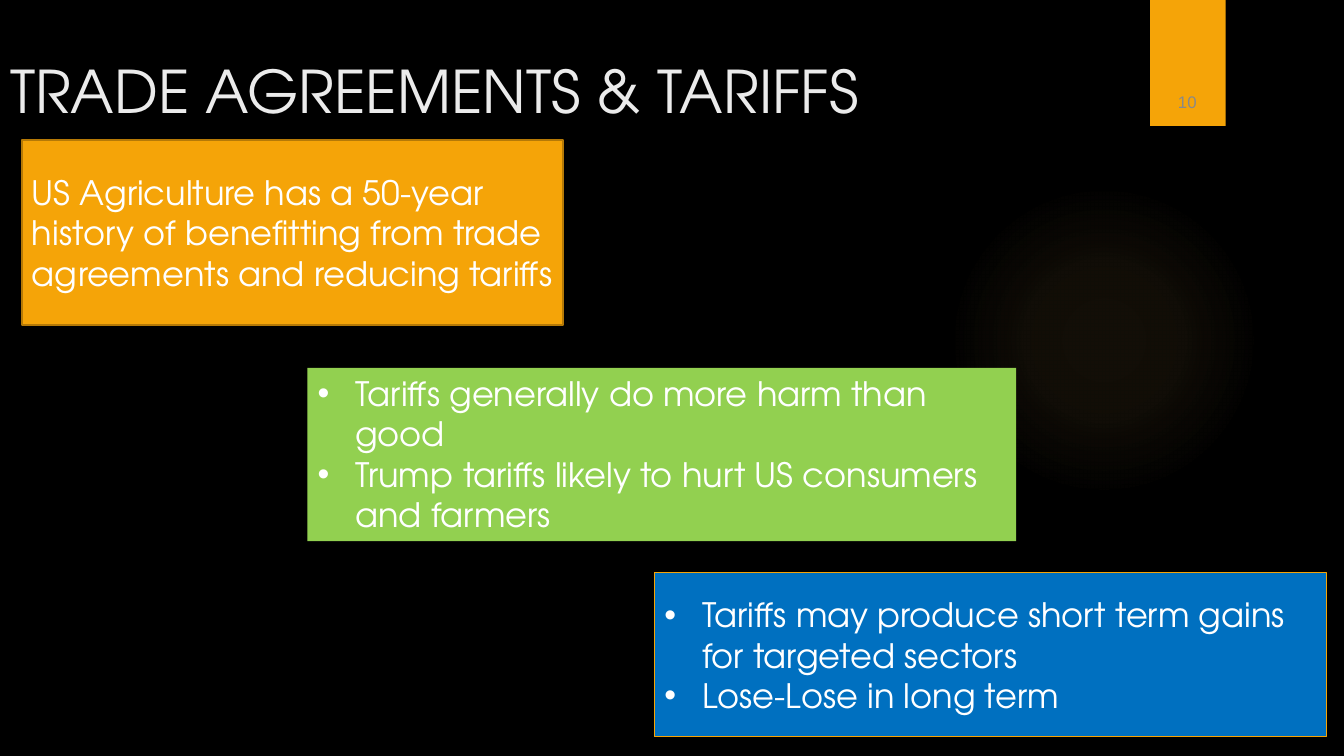
import pptx
import pptx.util
import pptx.oxml
import pptx.oxml.ns
import pptx.dml.color
import pptx.enum.shapes
import pptx.enum.text

Pt = pptx.util.Pt
qn = pptx.oxml.ns.qn
Kind = pptx.enum.shapes.MSO_SHAPE
Align = pptx.enum.text.PP_ALIGN
Anchor = pptx.enum.text.MSO_ANCHOR
Fit = pptx.enum.text.MSO_AUTO_SIZE

HUES = {
    "black": "000000",
    "white": "FFFFFF",
    "pale": "EBEBEB",
    "gray": "898989",
    "gold": "F5A408",
    "brown": "B57906",
    "glow": "FAC96A",
    "green": "92D050",
    "blue": "0070C0",
}


def make(tag, **attrs):
    """Make one drawing element with its attributes."""
    node = pptx.oxml.parse_xml(f"<a:{tag} {pptx.oxml.ns.nsdecls('a')}/>")
    for name, value in attrs.items():
        node.set(name, str(value))
    return node


def tint(hue, alpha):
    """Make a colour element with its opacity in percent."""
    node = make("srgbClr", val=HUES[hue])
    node.append(make("alpha", val=alpha * 1000))
    return node


class Deck:
    face = "TeX Gyre Adventor"
    size = 24
    indent = 27

    def __init__(self, wide, high, layout):
        self.file = pptx.Presentation()
        self.file.slide_width, self.file.slide_height = Pt(wide), Pt(high)
        self.slide = self.file.slides.add_slide(self.file.slide_layouts[layout])
        self.paint(self.slide.background.fill, "black")

    def paint(self, fill, hue):
        fill.solid()
        fill.fore_color.rgb = pptx.dml.color.RGBColor.from_string(HUES[hue])

    def place(self, shape, box):
        shape.left, shape.top, shape.width, shape.height = map(Pt, box)

    def style(self, shape, fill, line=None, width=0.75, shade=False):
        self.paint(shape.fill, fill)
        if line:
            self.paint(shape.line.fill, line)
            shape.line.width = Pt(width)
        else:
            shape.line.fill.background()
        shape.shadow.inherit = False
        if shade:
            cast = make("outerShdw", blurRad=Pt(3), dist=Pt(2), dir=90 * 60000,
                        algn="ctr", rotWithShape=0)
            cast.append(tint("black", 45))
            shape._element.spPr.find(qn("a:effectLst")).append(cast)

    def words(self, shape, lines, hue="white", size=None, face=None,
              align=Align.LEFT, anchor=Anchor.TOP, bullet=False):
        frame = shape.text_frame
        frame.text = "\n".join(lines)
        frame.word_wrap = True
        frame.auto_size = Fit.NONE
        frame.vertical_anchor = anchor
        for para in frame.paragraphs:
            para.alignment = align
            para.space_before = Pt(0)
            if bullet:
                props = para._p.get_or_add_pPr()
                props.set("marL", str(Pt(self.indent)))
                props.set("indent", str(-Pt(self.indent)))
                props.append(make("buFont", typeface="Arial"))
                props.append(make("buChar", char="•"))
            for run in para.runs:
                run.font.name = face or self.face
                run.font.size = Pt(size or self.size)
                self.paint(run.font.fill, hue)

    def title(self, text, box):
        shape = self.slide.shapes.title
        self.place(shape, box)
        self.words(shape, [text], "pale", 42)

    def points(self, slot, lines, box, anchor=Anchor.TOP, **look):
        shape = self.slide.placeholders[slot]
        self.place(shape, box)
        self.style(shape, **look)
        self.words(shape, lines, anchor=anchor, bullet=True)

    def panel(self, box, text=None, **look):
        shape = self.slide.shapes.add_shape(Kind.RECTANGLE, *map(Pt, box))
        self.style(shape, **look)
        if text:
            self.words(shape, [text], anchor=Anchor.MIDDLE)

    def label(self, text, box):
        shape = self.slide.shapes.add_textbox(*map(Pt, box))
        self.words(shape, [text], "gray", 12, "Arial", Align.CENTER, Anchor.BOTTOM)

    def glow(self, box, stops):
        shape = self.slide.shapes.add_shape(Kind.OVAL, *map(Pt, box))
        shape.line.fill.background()
        shape.shadow.inherit = False
        grad, ramp = make("gradFill", rotWithShape=1), make("gsLst")
        for spot, alpha in stops:
            stop = make("gs", pos=spot * 1000)
            stop.append(tint("glow", alpha))
            ramp.append(stop)
        shade = make("path", path="circle")
        shade.append(make("fillToRect", l=50000, t=50000, r=50000, b=50000))
        grad.extend([ramp, shade])
        shape._element.spPr.find(qn("a:prstGeom")).addnext(grad)
        # Send the glow behind everything else
        self.slide.shapes._spTree.insert(2, shape._element)


def main():
    deck = Deck(960, 540, layout=3)

    # Backdrop and page tab
    deck.glow((677.5, 131.8, 221.8, 221.8), [(0, 7), (36, 6), (69, 0)])
    deck.panel((821.5, 0, 54, 90), fill="gold", shade=True)
    deck.label("10", (815, 23, 66.2, 60.5))

    # Heading
    deck.title("TRADE AGREEMENTS & TARIFFS", (0, 35.3, 740.2, 110.2))

    # Three steps, from top left to bottom right
    deck.panel((15.8, 100.1, 386.6, 131.8),
               "US Agriculture has a 50-year history of benefitting "
               "from trade agreements and reducing tariffs",
               fill="gold", line="brown", width=1.5)
    deck.points(1, ["Tariffs generally do more harm than good",
                    "Trump tariffs likely to hurt US consumers and farmers"],
                (219.6, 262.8, 506.2, 123.8), fill="green")
    deck.points(2, ["Tariffs may produce short term gains for targeted sectors",
                    "Lose-Lose in long term"],
                (467.3, 409, 480.2, 117.4), Anchor.MIDDLE,
                fill="blue", line="gold", shade=True)

    deck.file.save("out.pptx")


if __name__ == "__main__":
    main()
